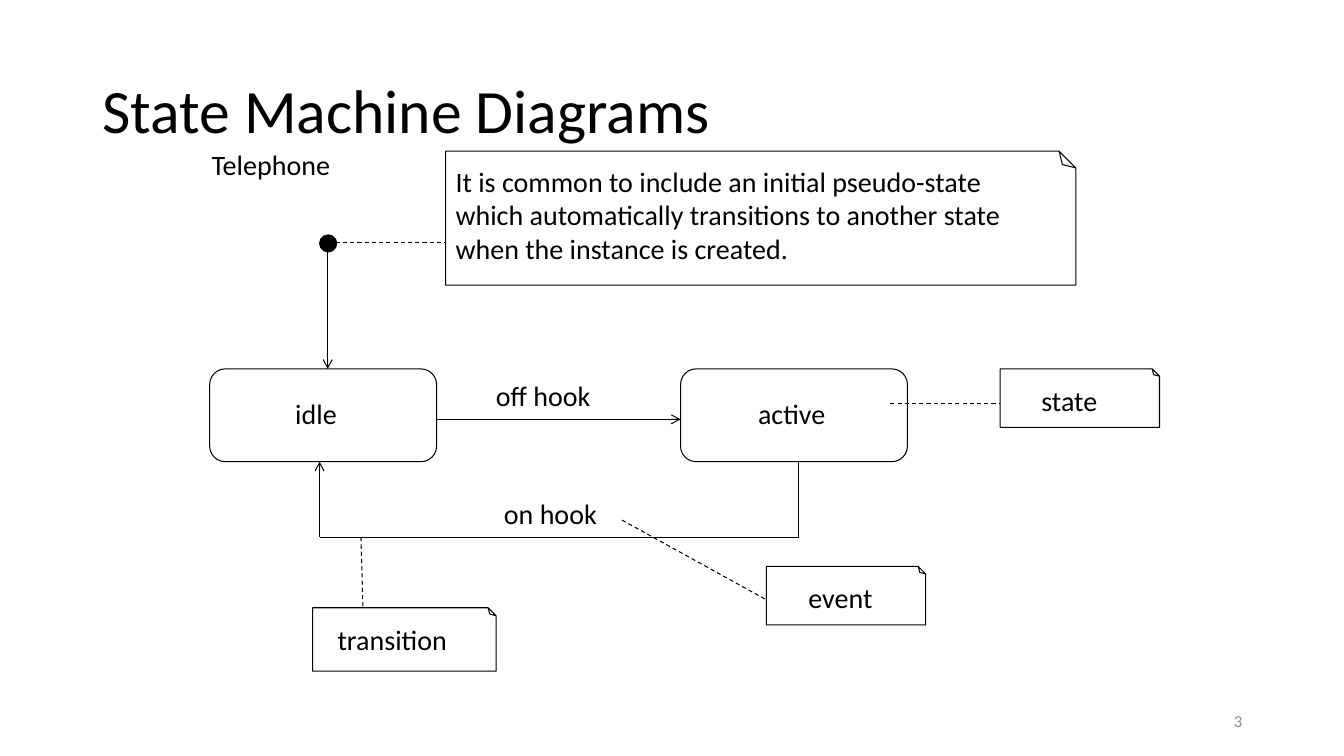
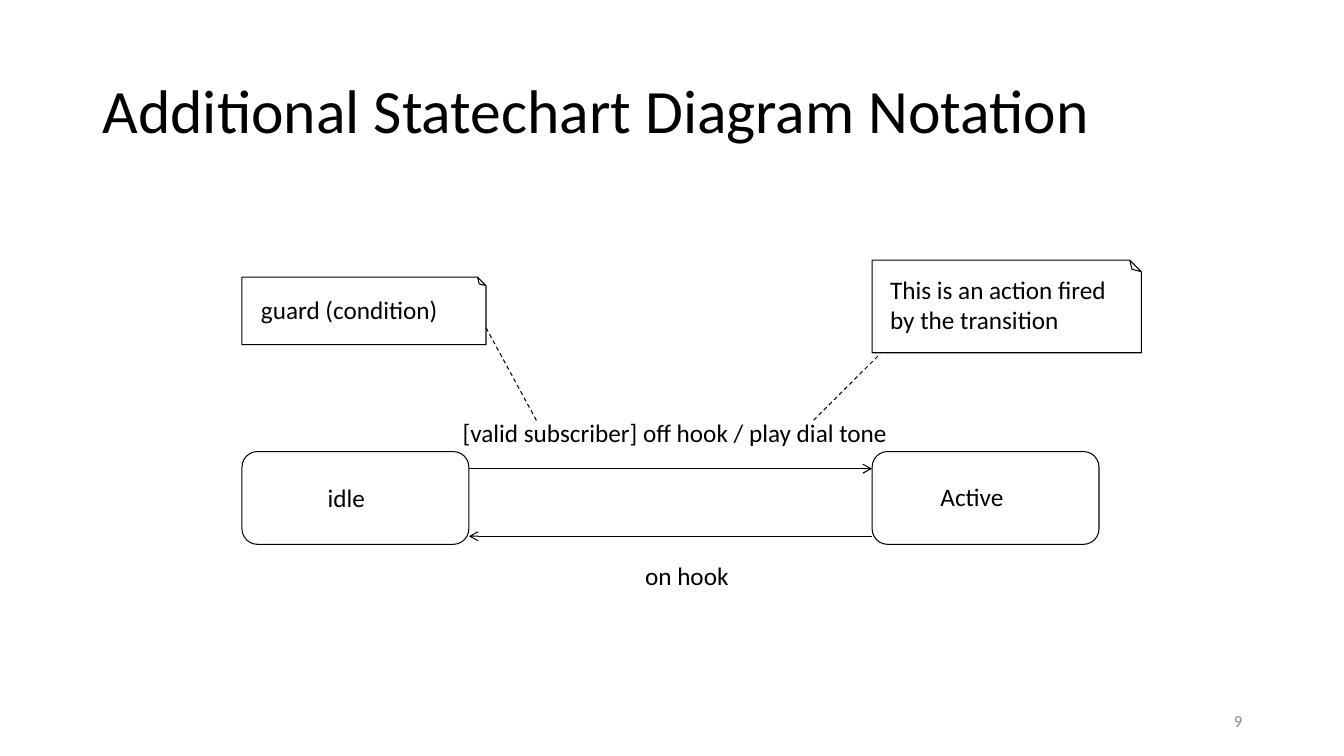
"""Build two slides of state machine diagrams for a telephone."""
from lxml.etree import SubElement
from pptx import Presentation
from pptx.dml.color import RGBColor
from pptx.enum.dml import MSO_LINE
from pptx.enum.shapes import MSO_CONNECTOR, MSO_SHAPE
from pptx.enum.text import MSO_ANCHOR, MSO_AUTO_SIZE, PP_ALIGN
from pptx.oxml.ns import qn
from pptx.util import Inches, Pt

COLORS = {"ink": "000000", "page_number": "8C8C8C"}
FONT = "Calibri"
LINE_WIDTH = Pt(0.75)
STATE_SIZE = (2.25, 0.92)
TITLE_AREA = (0.92, 0.4, 11.5, 1.45)
NUMBER_AREA = (9.42, 6.95, 3, 0.4)

SLIDES = [
    {
        "title": "State Machine Diagrams",
        "number": "3",
        "label_size": 20,
        "states": [(2.08, 3.66), (6.75, 3.66)],
        "initial": [(3.17, 2.33, 0.17, 0.17)],
        "notes": [
            (4.42, 1.5, 6.25, 1.33),
            (9.92, 3.66, 1.58, 0.58),
            (7.6, 5.62, 1.58, 0.58),
            (3.1, 6.03, 1.82, 0.63),
        ],
        "arrows": [
            ((4.33, 4.16), (6.75, 4.16)),
            ((3.25, 2.33), (3.25, 3.66)),
            ((7.92, 4.58), (7.92, 5.33), (3.17, 5.33), (3.17, 4.58)),
        ],
        "note_links": [
            ((3.33, 2.41), (4.42, 2.41)),
            ((8.83, 4), (9.92, 4)),
            ((6.17, 5.16), (7.6, 5.95)),
            ((3.58, 5.33), (3.6, 6.03)),
        ],
        "labels": [
            ("Telephone", (2, 1.41, 1.39, 0.44)),
            ("It is common to include an initial pseudo-state\n"
             "which automatically transitions to another state\n"
             "when the instance is created.", (4.42, 1.58, 5.66, 1.11)),
            ("idle", (2.83, 3.88, 0.64, 0.44)),
            ("active", (7.42, 3.88, 0.88, 0.44)),
            ("off hook", (4.82, 3.71, 1.19, 0.44)),
            ("on hook", (4.9, 4.88, 1.13, 0.44)),
            ("state", (10.23, 3.76, 0.77, 0.44)),
            ("event", (7.92, 5.71, 0.84, 0.44)),
            ("transition", (3.25, 6.13, 1.33, 0.44)),
        ],
    },
    {
        "title": "Additional Statechart Diagram Notation",
        "number": "9",
        "label_size": 18,
        "states": [(2.4, 4.48), (8.65, 4.48)],
        "initial": [],
        "notes": [(2.4, 2.75, 2.42, 0.67), (8.65, 2.58, 2.67, 0.92)],
        "arrows": [
            ((4.65, 4.65), (8.65, 4.65)),
            ((8.65, 5.32), (4.65, 5.32)),
        ],
        "note_links": [
            ((5.32, 4.17), (4.82, 3.25)),
            ((8.07, 4.17), (8.73, 3.51)),
        ],
        "labels": [
            ("guard (condition)", (2.49, 2.87, 1.98, 0.4)),
            ("This is an action fired\nby the transition",
             (8.73, 2.67, 2.37, 0.71)),
            ("[valid subscriber] off hook / play dial tone",
             (4.49, 4.09, 4.47, 0.4)),
            ("idle", (3.15, 4.74, 0.59, 0.4)),
            ("Active", (9.23, 4.73, 0.83, 0.4)),
            ("on hook", (6.3, 5.51, 1.04, 0.4)),
        ],
    },
]


def inches(values):
    return [Inches(value) for value in values]


def color(name):
    return RGBColor.from_string(COLORS[name])


def add_text(page, text, area, *, size, ink="ink", align=PP_ALIGN.LEFT,
             anchor=MSO_ANCHOR.TOP, wrap=False, spacing=1.0):
    box = page.shapes.add_textbox(*inches(area))
    frame = box.text_frame
    frame.word_wrap = wrap
    frame.auto_size = (MSO_AUTO_SIZE.NONE if wrap
                       else MSO_AUTO_SIZE.SHAPE_TO_FIT_TEXT)
    frame.vertical_anchor = anchor
    frame.text = text
    for para in frame.paragraphs:
        para.alignment = align
        para.line_spacing = spacing
        for span in para.runs:
            span.font.name = FONT
            span.font.size = Pt(size)
            span.font.color.rgb = color(ink)


def add_outline(page, kind, area, *, filled=False):
    shape = page.shapes.add_shape(kind, *inches(area))
    shape.shadow.inherit = False
    if filled:
        shape.fill.solid()
        shape.fill.fore_color.rgb = color("ink")
    else:
        shape.fill.background()
    shape.line.color.rgb = color("ink")
    shape.line.width = LINE_WIDTH
    return shape


def add_note(page, area):
    note = add_outline(page, MSO_SHAPE.FOLDED_CORNER, area)
    properties = note.element.spPr
    properties.find(qn("a:xfrm")).set("flipV", "1")
    geometry = properties.find(qn("a:prstGeom"))
    for guides in geometry.findall(qn("a:avLst")):
        geometry.remove(guides)
    guides = SubElement(geometry, qn("a:avLst"))
    SubElement(guides, qn("a:gd"), name="adj", fmla="val 12500")


def add_line(page, start, end, *, dashed=False, arrow=False):
    connector = page.shapes.add_connector(
        MSO_CONNECTOR.STRAIGHT, *inches(start + end))
    connector.line.color.rgb = color("ink")
    connector.line.width = LINE_WIDTH
    if dashed:
        connector.line.dash_style = MSO_LINE.DASH
    properties = connector.element.spPr
    if arrow:
        SubElement(properties.find(qn("a:ln")), qn("a:tailEnd"), type="arrow")
    SubElement(properties, qn("a:effectLst"))


def add_arrow(page, points):
    for index, (start, end) in enumerate(zip(points, points[1:]), 2):
        add_line(page, start, end, arrow=index == len(points))


def build_slide(deck, content):
    page = deck.slides.add_slide(deck.slide_layouts[6])
    add_text(page, content["title"], TITLE_AREA, size=44, wrap=True,
             anchor=MSO_ANCHOR.MIDDLE, spacing=0.9)
    add_text(page, content["number"], NUMBER_AREA, size=12, wrap=True,
             ink="page_number", align=PP_ALIGN.RIGHT, anchor=MSO_ANCHOR.MIDDLE)
    for corner in content["states"]:
        add_outline(page, MSO_SHAPE.ROUNDED_RECTANGLE, corner + STATE_SIZE)
    for area in content["notes"]:
        add_note(page, area)
    for points in content["arrows"]:
        add_arrow(page, points)
    for start, end in content["note_links"]:
        add_line(page, start, end, dashed=True)
    for area in content["initial"]:
        add_outline(page, MSO_SHAPE.OVAL, area, filled=True)
    for text, area in content["labels"]:
        add_text(page, text, area, size=content["label_size"])


def main():
    deck = Presentation()
    deck.slide_width, deck.slide_height = inches((13.33, 7.5))
    for content in SLIDES:
        build_slide(deck, content)
    deck.save("out.pptx")


if __name__ == "__main__":
    main()
